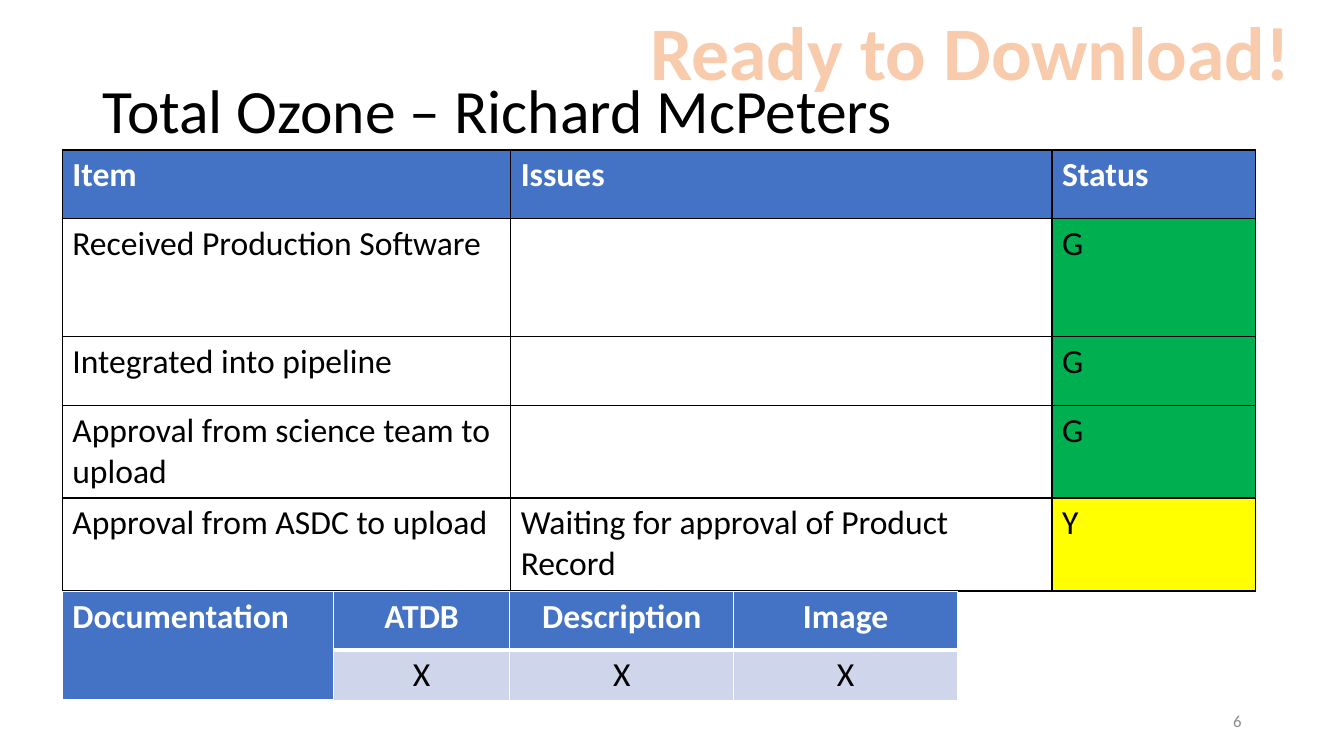
from dataclasses import dataclass

from lxml.etree import SubElement
from pptx import Presentation
from pptx.dml.color import RGBColor
from pptx.enum.text import MSO_ANCHOR, MSO_AUTO_SIZE, PP_ALIGN
from pptx.oxml.ns import qn
from pptx.util import Cm, Pt


@dataclass(frozen=True)
class Theme:
    """Colours, font and type sizes of the slide."""

    font: str = "Calibri"
    black: str = "000000"
    white: str = "FFFFFF"
    header: str = "4472C4"
    band: str = "CFD5EA"
    banner: str = "F8CBAD"
    grey: str = "8C8C8C"
    banner_size: int = 54
    title_size: int = 44
    table_size: int = 24
    number_size: int = 12


THEME = Theme()
STATUS_FILLS = {"G": "00B050", "Y": "FFFF00"}
CHECKLIST = [
    ("Item", "Issues", "Status"),
    ("Received Production Software", "", "G"),
    ("Integrated into pipeline", "", "G"),
    ("Approval from science team to upload", "", "G"),
    ("Approval from ASDC to upload", "Waiting for approval of Product Record", "Y"),
]
DOCUMENTATION = [
    ("Documentation", "ATDB", "Description", "Image"),
    ("", "X", "X", "X"),
]


def write(frame, text, size, color, bold=False, align=PP_ALIGN.LEFT):
    """Put one formatted paragraph in a text frame."""
    frame.text = text
    paragraph = frame.paragraphs[0]
    paragraph.alignment = align
    font = paragraph.font
    font.name, font.size, font.bold = THEME.font, Pt(size), bold
    font.color.rgb = RGBColor.from_string(color)
    return paragraph


def set_borders(cell, color, bottom_width=1):
    """Draw the four borders of a cell, ahead of its fill."""
    properties = cell._tc.get_or_add_tcPr()
    widths = {"a:lnL": 1, "a:lnR": 1, "a:lnT": 1, "a:lnB": bottom_width}
    for position, (tag, width) in enumerate(widths.items()):
        line = SubElement(properties, qn(tag), w=str(Pt(width)))
        fill = SubElement(line, qn("a:solidFill"))
        SubElement(fill, qn("a:srgbClr"), val=color)
        properties.insert(position, line)


def set_fill(cell, color):
    """Fill a cell, or clear it when there is no colour."""
    if color:
        cell.fill.solid()
        cell.fill.fore_color.rgb = RGBColor.from_string(color)
    else:
        cell.fill.background()


def add_plain_table(slide, left, top, widths, heights):
    """Add an unbanded table with the given column widths and row heights in cm."""
    table = slide.shapes.add_table(
        len(heights), len(widths), Cm(left), Cm(top), Cm(sum(widths)), Cm(sum(heights))
    ).table
    table.first_row = table.horz_banding = False
    for column, width in zip(table.columns, widths):
        column.width = Cm(width)
    for row, height in zip(table.rows, heights):
        row.height = Cm(height)
    return table


def add_checklist(slide, left, top, widths, heights):
    """Add the table of items, issues and status."""
    table = add_plain_table(slide, left, top, widths, heights)
    for row, texts in enumerate(CHECKLIST):
        is_header = row == 0
        for column, text in enumerate(texts):
            cell = table.cell(row, column)
            color = THEME.white if is_header else THEME.black
            write(cell.text_frame, text, THEME.table_size, color, is_header)
            set_fill(cell, THEME.header if is_header else STATUS_FILLS.get(text))
            set_borders(cell, THEME.black)


def add_documentation(slide, left, top, widths, heights):
    """Add the documentation table with its tall label cell."""
    table = add_plain_table(slide, left, top, widths, heights)
    table.cell(0, 0).merge(table.cell(1, 0))
    for row, texts in enumerate(DOCUMENTATION):
        for column, text in enumerate(texts):
            cell = table.cell(row, column)
            is_header = row == 0 or column == 0
            color = THEME.white if is_header else THEME.black
            align = PP_ALIGN.CENTER if column else PP_ALIGN.LEFT
            write(cell.text_frame, text, THEME.table_size, color, is_header, align)
            set_fill(cell, THEME.header if is_header else THEME.band)
            set_borders(cell, THEME.white, 3 if is_header else 1)


def add_title(slide, left, top, width, height):
    """Place and format the title placeholder."""
    title = slide.shapes.title
    title.left, title.top, title.width, title.height = map(Cm, (left, top, width, height))
    frame = title.text_frame
    frame.auto_size = MSO_AUTO_SIZE.NONE
    frame.vertical_anchor = MSO_ANCHOR.MIDDLE
    paragraph = write(frame, "Total Ozone – Richard McPeters", THEME.title_size, THEME.black)
    paragraph.line_spacing = 0.9


def add_banner(slide, left, top, width, height):
    """Add the large banner in the top right corner."""
    frame = slide.shapes.add_textbox(Cm(left), Cm(top), Cm(width), Cm(height)).text_frame
    frame.word_wrap = False
    frame.auto_size = MSO_AUTO_SIZE.SHAPE_TO_FIT_TEXT
    write(frame, "Ready to Download!", THEME.banner_size, THEME.banner, True, PP_ALIGN.CENTER)


def add_slide_number(slide, left, top, width, height):
    """Add the slide number at the bottom right."""
    frame = slide.shapes.add_textbox(Cm(left), Cm(top), Cm(width), Cm(height)).text_frame
    frame.word_wrap = True
    frame.vertical_anchor = MSO_ANCHOR.MIDDLE
    write(frame, "6", THEME.number_size, THEME.grey, align=PP_ALIGN.RIGHT)


def main():
    """Build the status slide and save it."""
    presentation = Presentation()
    presentation.slide_width, presentation.slide_height = Cm(33.87), Cm(19.05)
    slide = presentation.slides.add_slide(presentation.slide_layouts[5])
    add_title(slide, 2.33, 1.01, 29.21, 3.68)
    add_slide_number(slide, 23.92, 17.66, 7.62, 1.01)
    add_checklist(slide, 1.57, 3.78, (11.3, 13.64, 5.13), (1.73, 2.97, 1.73, 2.34, 2.34))
    add_documentation(slide, 1.57, 14.91, (6.83, 4.45, 5.64, 5.64), (1.47, 1.27))
    add_banner(slide, 16.05, 0, 16.81, 2.57)
    presentation.save("out.pptx")


if __name__ == "__main__":
    main()
